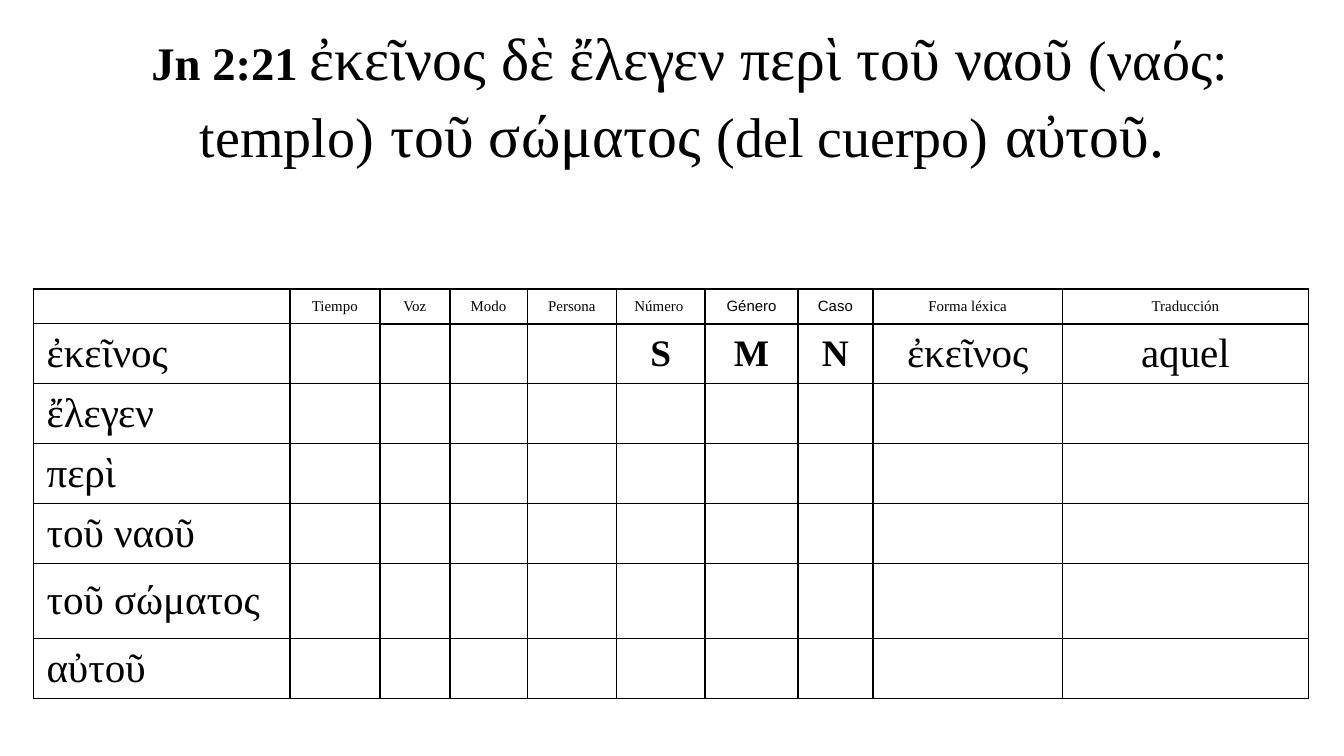
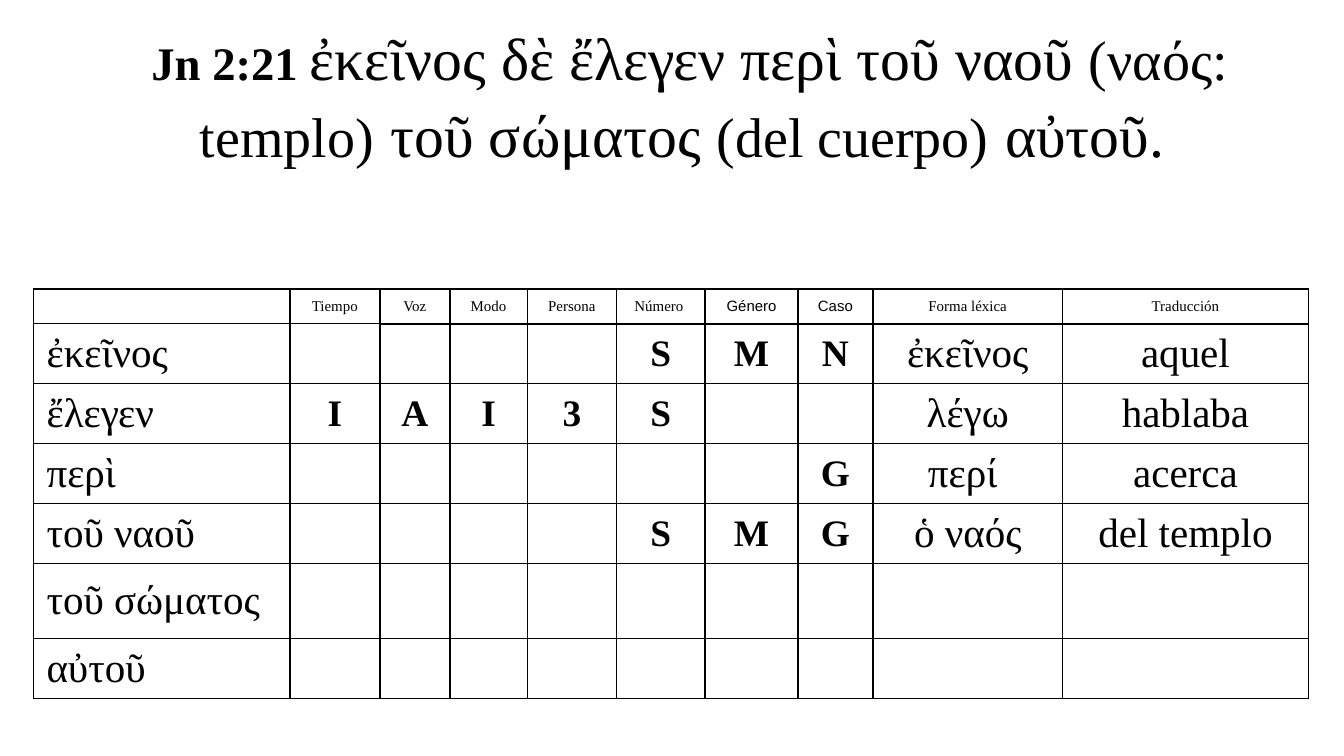
"""Build two parsing-exercise slides for John 2:21."""
import dataclasses
from typing import Optional

import lxml.etree
import pptx
import pptx.dml.color
import pptx.enum.text
import pptx.oxml.ns
import pptx.util

Cm, Pt, qn = pptx.util.Cm, pptx.util.Pt, pptx.oxml.ns.qn
CENTER = pptx.enum.text.PP_ALIGN.CENTER
LEFT = pptx.enum.text.PP_ALIGN.LEFT
MIDDLE = pptx.enum.text.MSO_ANCHOR.MIDDLE

BLACK = "000000"
SERIF, SANS = "Times New Roman", "Arial"
TABLE_HEIGHT = Cm(7.72)
COL_WIDTHS = (4.85, 1.7, 1.32, 1.47, 1.68, 1.68, 1.75, 1.42, 3.58, 4.65)
ROW_HEIGHTS = (0.66, 1.1, 1.1, 1.1, 1.1, 1.42, 1.1)
FIRST_LEXICAL_COL = 8


@dataclasses.dataclass(frozen=True)
class Run:
    text: str
    size: float
    bold: bool = False
    font: str = SERIF


@dataclasses.dataclass(frozen=True)
class Entry:
    word: str
    answers: tuple[str, ...] = ("",) * 9


VERSE = (
    Run("Jn 2:21 ", 25, True),
    Run("ἐκεῖνος δὲ ἔλεγεν περὶ τοῦ ναοῦ ", 32),
    Run("(ναός: templo)", 30),
    Run(" ", 35),
    Run("τοῦ σώματος ", 32),
    Run("(del cuerpo)", 30),
    Run(" ", 35),
    Run("αὐτοῦ. ", 32),
)
HEADERS = ("", "Tiempo", "Voz", "Modo", "Persona", "Número ", "Género", "Caso",
           "Forma léxica", "Traducción")
SANS_HEADERS = ("Género", "Caso")
ENTRIES = (
    Entry("ἐκεῖνος", ("", "", "", "", "S", "M", "N", "ἐκεῖνος", "aquel")),
    Entry("ἔλεγεν", ("I", "A", "I", "3", "S", "", "", "λέγω", "hablaba")),
    Entry("περὶ", ("", "", "", "", "", "", "G", "περί ", "acerca")),
    Entry("τοῦ ναοῦ", ("", "", "", "", "S", "M", "G", "ὁ ναός", "del templo")),
    Entry("τοῦ σώματος"),
    Entry("αὐτοῦ"),
)
SOLVED_COUNTS = (1, 4)


def rgb(color: str) -> pptx.dml.color.RGBColor:
    """Turn a hex string into a colour."""
    return pptx.dml.color.RGBColor.from_string(color)


def add_run(p, run: Run) -> None:
    """Append one formatted run to a paragraph."""
    r = p.add_run()
    r.text = run.text
    r.font.name = run.font
    r.font.size = Pt(run.size)
    r.font.bold = run.bold
    r.font.color.rgb = rgb(BLACK)


def add_verse(s) -> None:
    """Draw the verse at the top of a slide."""
    tf = s.shapes.add_textbox(Cm(1.07), Cm(0.25), Cm(23.93), Cm(3.12)).text_frame
    tf.word_wrap = True
    tf.auto_size = pptx.enum.text.MSO_AUTO_SIZE.SHAPE_TO_FIT_TEXT
    tf.vertical_anchor = MIDDLE
    p = tf.paragraphs[0]
    p.alignment = CENTER
    for run in VERSE:
        add_run(p, run)


def set_borders(cell, top: float, bottom: float) -> None:
    """Give a cell black borders with the chosen top and bottom widths."""
    tc_pr = cell._tc.get_or_add_tcPr()
    for side, width in (("L", 1), ("R", 1), ("T", top), ("B", bottom)):
        ln = lxml.etree.SubElement(tc_pr, qn(f"a:ln{side}"), w=str(Pt(width)))
        fill = lxml.etree.SubElement(ln, qn("a:solidFill"))
        lxml.etree.SubElement(fill, qn("a:srgbClr"), val=BLACK)


def set_space_before(p, percent: int) -> None:
    """Set the space before a paragraph as a share of its line."""
    before = lxml.etree.SubElement(p._p.get_or_add_pPr(), qn("a:spcBef"))
    lxml.etree.SubElement(before, qn("a:spcPct"), val=str(percent * 1000))


def cell_run(text: str, row: int, col: int) -> Optional[Run]:
    """Choose the text style for a place in the table."""
    if not text:
        return None
    if row == 0:
        return Run(text, 8, font=SANS if text in SANS_HEADERS else SERIF)
    if 0 < col < FIRST_LEXICAL_COL:
        return Run(text, 20, True)
    return Run(text, 22)


def fill_cell(cell, text: str, row: int, col: int) -> None:
    """Format one table cell and write its text."""
    thin = col < 2
    set_borders(cell, 0.75 if thin and row else 1, 0.75 if thin else 1)
    cell.fill.background()
    cell.vertical_anchor = MIDDLE
    cell.margin_left = cell.margin_right = Cm(0.25)
    cell.margin_top = cell.margin_bottom = Cm(0.1)
    p = cell.text_frame.paragraphs[0]
    p.alignment = CENTER if col else LEFT
    if row and not col:
        set_space_before(p, 20 if row == 1 else 50)
    run = cell_run(text, row, col)
    if run:
        add_run(p, run)
    else:
        lxml.etree.SubElement(p._p, qn("a:endParaRPr"), sz="800")


def add_parsing_table(s, solved: int) -> None:
    """Draw the parsing table with the first entries solved."""
    rows = [HEADERS]
    for i, entry in enumerate(ENTRIES):
        answers = entry.answers if i < solved else ("",) * len(entry.answers)
        rows.append((entry.word, *answers))
    frame = s.shapes.add_table(len(rows), len(HEADERS), Cm(0.63), Cm(5.46),
                               Cm(sum(COL_WIDTHS)), TABLE_HEIGHT)
    table = frame.table
    table.first_row = table.horz_banding = False
    for column, width in zip(table.columns, COL_WIDTHS):
        column.width = Cm(width)
    for table_row, height in zip(table.rows, ROW_HEIGHTS):
        table_row.height = Cm(height)
    frame.height = TABLE_HEIGHT
    for i, texts in enumerate(rows):
        for j, text in enumerate(texts):
            fill_cell(table.cell(i, j), text, i, j)


def main() -> None:
    """Build and save the presentation."""
    prs = pptx.Presentation()
    prs.slide_width, prs.slide_height = Cm(25.4), Cm(14.29)
    for solved in SOLVED_COUNTS:
        s = prs.slides.add_slide(prs.slide_layouts[6])
        add_verse(s)
        add_parsing_table(s, solved)
    prs.save("out.pptx")


if __name__ == "__main__":
    main()
